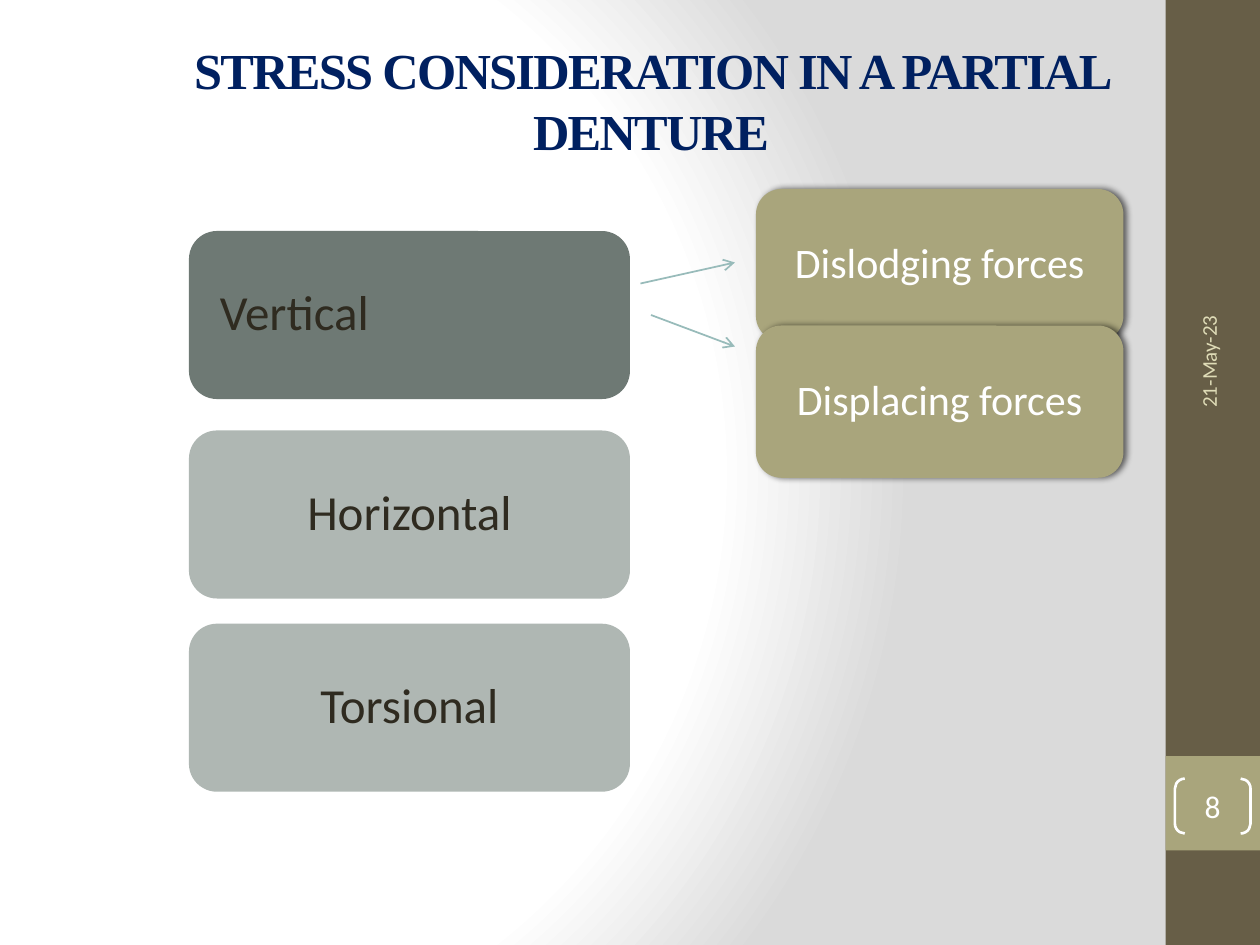
from dataclasses import dataclass

from lxml import etree
from pptx import Presentation
from pptx.dml.color import RGBColor
from pptx.enum.shapes import MSO_CONNECTOR, MSO_SHAPE
from pptx.enum.text import MSO_ANCHOR, PP_ALIGN
from pptx.oxml import parse_xml
from pptx.oxml.ns import nsdecls, qn
from pptx.util import Inches, Pt

RECT, ROUND = MSO_SHAPE.RECTANGLE, MSO_SHAPE.ROUNDED_RECTANGLE
BRACKETS = MSO_SHAPE.DOUBLE_BRACKET
STRAIGHT = MSO_CONNECTOR.STRAIGHT
MIDDLE = MSO_ANCHOR.MIDDLE
LEFT, CENTER = PP_ALIGN.LEFT, PP_ALIGN.CENTER
COLS, ROWS = 120, 90
WIDTH, HEIGHT = Inches(10), Inches(7.5)


@dataclass(frozen=True)
class Theme:
    """Colours, fonts and type sizes of the slide."""
    body: str = "Calibri"
    heading: str = "Times New Roman"
    white: str = "FFFFFF"
    grey: str = "DADADA"
    navy: str = "002060"
    ink: str = "2F2B20"
    bar: str = "675E47"
    olive: str = "A9A57C"
    cream: str = "DFDCB7"
    slate: str = "6E7974"
    mist: str = "AFB7B3"
    arrow: str = "98BBBA"
    title_pt: float = 28.8
    type_pt: float = 28
    force_pt: float = 24
    page_pt: float = 18
    date_pt: float = 12


T = Theme()


def grid(*box):
    """Turn alternating columns and rows into slide lengths."""
    return [int(v * (HEIGHT / ROWS if i % 2 else WIDTH / COLS)) for i, v in enumerate(box)]


def write(sp, text, size, color, align=CENTER, font=T.body, inset=0.1, spacing=1.0):
    """Put one run of vertically centred text in a shape."""
    tf = sp.text_frame
    tf.word_wrap = True
    tf.vertical_anchor = MIDDLE
    tf.margin_left = tf.margin_right = Inches(inset)
    tf.margin_top = tf.margin_bottom = 0
    p = tf.paragraphs[0]
    p.alignment, p.line_spacing = align, spacing
    r = p.add_run()
    r.text = text
    r.font.name, r.font.size = font, Pt(size)
    r.font.color.rgb = RGBColor.from_string(color)
    return r


def add_block(s, kind, box, fill=None):
    """Add a flat shape with no outline."""
    sp = s.shapes.add_shape(kind, *grid(*box))
    sp.shadow.inherit = False
    sp.line.fill.background()
    if fill:
        sp.fill.solid()
        sp.fill.fore_color.rgb = RGBColor.from_string(fill)
    else:
        sp.fill.background()
    return sp


def add_background(s):
    """Fill the background with a circular gradient."""
    fill = s.background.fill
    fill.solid()
    solid = s.element.find(".//" + qn("p:bgPr")).find(qn("a:solidFill"))
    stops = "".join(f'<a:gs pos="{pos * 1000}"><a:srgbClr val="{c}"/></a:gs>'
                    for pos, c in ((0, T.white), (75, T.white), (100, T.grey)))
    solid.getparent().replace(solid, parse_xml(
        f'<a:gradFill {nsdecls("a")} rotWithShape="1"><a:gsLst>{stops}</a:gsLst>'
        '<a:path path="circle"><a:fillToRect l="20000" t="50000" r="100000" b="50000"/>'
        '</a:path></a:gradFill>'))


def add_title(s, box, text):
    """Add the tightly spaced heading."""
    r = write(s.shapes.add_textbox(*grid(*box)), text, T.title_pt, T.navy, font=T.heading)
    r.font.bold = True
    r.font._element.set("spc", "-100")


def add_sidebar(s, box, date, page):
    """Add the side bar with its date and page badge."""
    x, y, w, h = box
    add_block(s, RECT, box, T.bar)
    add_block(s, RECT, (x, y + 0.8 * h, w, 0.1 * h), T.olive)
    tb = s.shapes.add_textbox(*grid(x + w / 2 - 16.4, y + 0.24 * h, 32, 4.8))
    tb.rotation = 270
    write(tb, date, T.date_pt, T.cream, LEFT)
    sp = add_block(s, BRACKETS, (x + 0.1 * w, y + 0.824 * h, 0.8 * w, 0.058 * h))
    sp.adjustments[0] = 0.18
    sp.line.color.rgb = RGBColor.from_string(T.white)
    sp.line.width = Pt(1.5)
    write(sp, page, T.page_pt, T.white, inset=0)


def add_stress_types(s, box, items):
    """Add the column of stress types, each at its own row offset."""
    x, y, w, h = box
    for text, offset, fill, align in items:
        sp = add_block(s, ROUND, (x, y + offset, w, h), fill)
        write(sp, text, T.type_pt, T.ink, align, inset=0.18, spacing=0.9)


def add_forces(s, box, pitch, names):
    """Add overlapping shadowed force boxes at an equal pitch."""
    x, y, w, h = box
    for i, text in enumerate(names):
        sp = add_block(s, ROUND, (x, y + i * pitch, w, h), T.olive)
        effects = sp._element.spPr.find(qn("a:effectLst"))
        effects.append(parse_xml(
            f'<a:outerShdw {nsdecls("a")} blurRad="{Pt(4)}" dist="{Pt(2)}" dir="0">'
            '<a:srgbClr val="000000"><a:alpha val="60000"/></a:srgbClr></a:outerShdw>'))
        write(sp, text, T.force_pt, T.white, inset=0.16, spacing=0.9)


def add_arrows(s, origin, ends):
    """Add thin open arrows relative to an origin."""
    x, y = origin
    for x1, y1, x2, y2 in ends:
        c = s.shapes.add_connector(STRAIGHT, *grid(x + x1, y + y1, x + x2, y + y2))
        c.line.color.rgb = RGBColor.from_string(T.arrow)
        c.line.width = Pt(1)
        etree.SubElement(c.line._get_or_add_ln(), qn("a:tailEnd"), type="arrow")
        etree.SubElement(c._element.spPr, qn("a:effectLst"))


def main():
    """Build and save the slide."""
    prs = Presentation()
    prs.slide_width, prs.slide_height = WIDTH, HEIGHT
    s = prs.slides.add_slide(prs.slide_layouts[6])
    add_background(s)
    add_sidebar(s, (111, 0, 9, 90), "21-May-23", "8")
    add_title(s, (9, 3.6, 106, 11.8), "STRESS CONSIDERATION IN A PARTIAL DENTURE")
    add_stress_types(s, (18, 22, 42, 16), (
        ("Vertical", 0, T.slate, LEFT),
        ("Horizontal", 19, T.mist, CENTER),
        ("Torsional", 37.4, T.mist, CENTER)))
    add_forces(s, (72, 18, 35, 14.5), 13, ("Dislodging forces", "Displacing forces"))
    add_arrows(s, (61, 25), ((0, 2, 9, 0), (1, 5, 9, 8)))
    prs.save("out.pptx")


if __name__ == "__main__":
    main()
